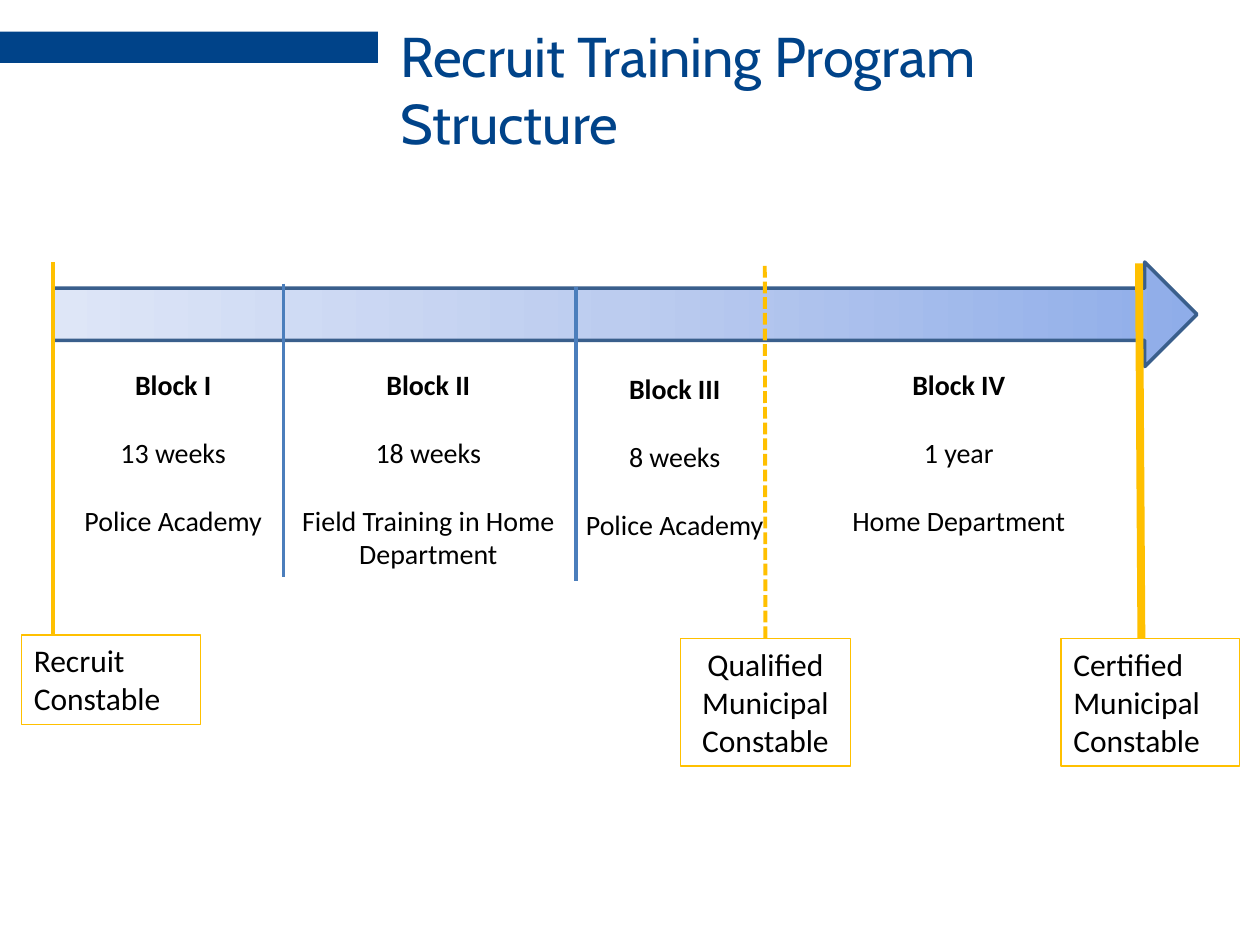
import copy
import pptx
import pptx.util
import pptx.dml.color
import pptx.enum.dml
import pptx.enum.shapes
import pptx.enum.text
import pptx.oxml.ns

Inches = pptx.util.Inches
Pt = pptx.util.Pt
Color = pptx.dml.color.RGBColor.from_string
Shape = pptx.enum.shapes.MSO_SHAPE
Align = pptx.enum.text.PP_ALIGN
Anchor = pptx.enum.text.MSO_ANCHOR


class Theme:
    navy = Color("004389")
    edge = Color("3A5F8C")
    blue = Color("4B7EBC")
    gold = Color("FFC000")
    black = Color("000000")
    white = Color("FFFFFF")
    fade = [(0, "8FADE9"), (0.5, "BCCCEF"), (1, "DEE6F7")]
    head = "Cabin"
    body = "Calibri"
    title = 32
    label = 18
    block = 16


def write(shape, lines, size, font=Theme.body, color=Theme.black, align=Align.LEFT,
          anchor=Anchor.TOP, gap=0, lead=False):
    frame = shape.text_frame
    frame.word_wrap = True
    frame.vertical_anchor = anchor
    for i, line in enumerate(lines):
        para = frame.paragraphs[0] if i == 0 else frame.add_paragraph()
        para.alignment = align
        if i:
            para.space_before = Pt(gap)
        run = para.add_run()
        run.text = line
        run.font.name = font
        run.font.size = Pt(size)
        run.font.bold = lead and i == 0
        run.font.color.rgb = color


deck = pptx.Presentation()
deck.slide_width = Inches(10)
deck.slide_height = Inches(7.5)
slide = deck.slides.add_slide(deck.slide_layouts[6])
shapes = slide.shapes

bar = shapes.add_shape(Shape.RECTANGLE, Inches(0), Inches(0.25), Inches(3), Inches(0.25))
bar.shadow.inherit = False
bar.fill.solid()
bar.fill.fore_color.rgb = Theme.navy
bar.line.fill.background()

arrow = shapes.add_shape(Shape.RIGHT_ARROW, Inches(0.42), Inches(2.08), Inches(9.08), Inches(0.83))
arrow.shadow.inherit = False
arrow.line.color.rgb = Theme.edge
arrow.line.width = Pt(2)
arrow.fill.gradient()
arrow.fill.gradient_angle = 180
first = arrow._element.spPr.find(".//" + pptx.oxml.ns.qn("a:gs"))
first.addnext(copy.deepcopy(first))
for stop, (place, tone) in zip(arrow.fill.gradient_stops, Theme.fade):
    stop.position = place
    stop.color.rgb = Color(tone)

marks = {}
for name, x1, y1, x2, y2, color, width in [
    ("recruit", 0.42, 2.08, 0.42, 5.04, Theme.gold, 2.25),
    ("first", 2.25, 2.25, 2.25, 4.58, Theme.blue, 2.25),
    ("second", 4.57, 2.28, 4.57, 4.61, Theme.blue, 2.25),
    ("qualified", 6.07, 2.11, 6.07, 5.07, Theme.gold, 2.25),
    ("certified", 9.04, 2.09, 9.06, 5.25, Theme.gold, 4.5),
]:
    mark = shapes.add_connector(pptx.enum.shapes.MSO_CONNECTOR.STRAIGHT,
                                Inches(x1), Inches(y1), Inches(x2), Inches(y2))
    mark.line.color.rgb = color
    mark.line.width = Pt(width)
    mark._element.spPr.append(pptx.oxml.parse_xml(
        "<a:effectLst %s/>" % pptx.oxml.ns.nsdecls("a")))
    marks[name] = mark
marks["qualified"].line.dash_style = pptx.enum.dml.MSO_LINE.SQUARE_DOT

ranks = {}
for name, text, x, y, w, h, align in [
    ("recruit", "Recruit Constable", 0.17, 5.04, 1.42, 0.71, Align.LEFT),
    ("qualified", "Qualified Municipal Constable", 5.4, 5.07, 1.35, 1.01, Align.CENTER),
    ("certified", "Certified Municipal Constable", 8.42, 5.07, 1.42, 1.01, Align.LEFT),
]:
    rank = shapes.add_shape(Shape.RECTANGLE, Inches(x), Inches(y), Inches(w), Inches(h))
    rank.shadow.inherit = False
    rank.fill.background()
    rank.line.color.rgb = Theme.gold
    rank.line.width = Pt(0.75)
    write(rank, [text], Theme.label, align=align)
    ranks[name] = rank
ranks["certified"].fill.solid()
ranks["certified"].fill.fore_color.rgb = Theme.white
marks["qualified"].end_connect(ranks["qualified"], 0)

for x, y, w, h, lines in [
    (0.5, 2.87, 1.75, 1.45, ["Block I", "13 weeks", "Police Academy"]),
    (2.05, 2.87, 2.7, 1.72, ["Block II", "18 weeks", "Field Training in Home Department"]),
    (4.48, 2.9, 1.75, 1.45, ["Block III", "8 weeks", "Police Academy"]),
    (6.63, 2.87, 1.96, 1.45, ["Block IV", "1 year", "Home Department"]),
]:
    block = shapes.add_textbox(Inches(x), Inches(y), Inches(w), Inches(h))
    write(block, lines, Theme.block, align=Align.CENTER, gap=19.5, lead=True)

title = shapes.add_textbox(Inches(3.08), Inches(0.08), Inches(6.17), Inches(1.25))
write(title, ["Recruit Training Program Structure"], Theme.title, font=Theme.head,
      color=Theme.navy, anchor=Anchor.MIDDLE)

deck.save("out.pptx")
